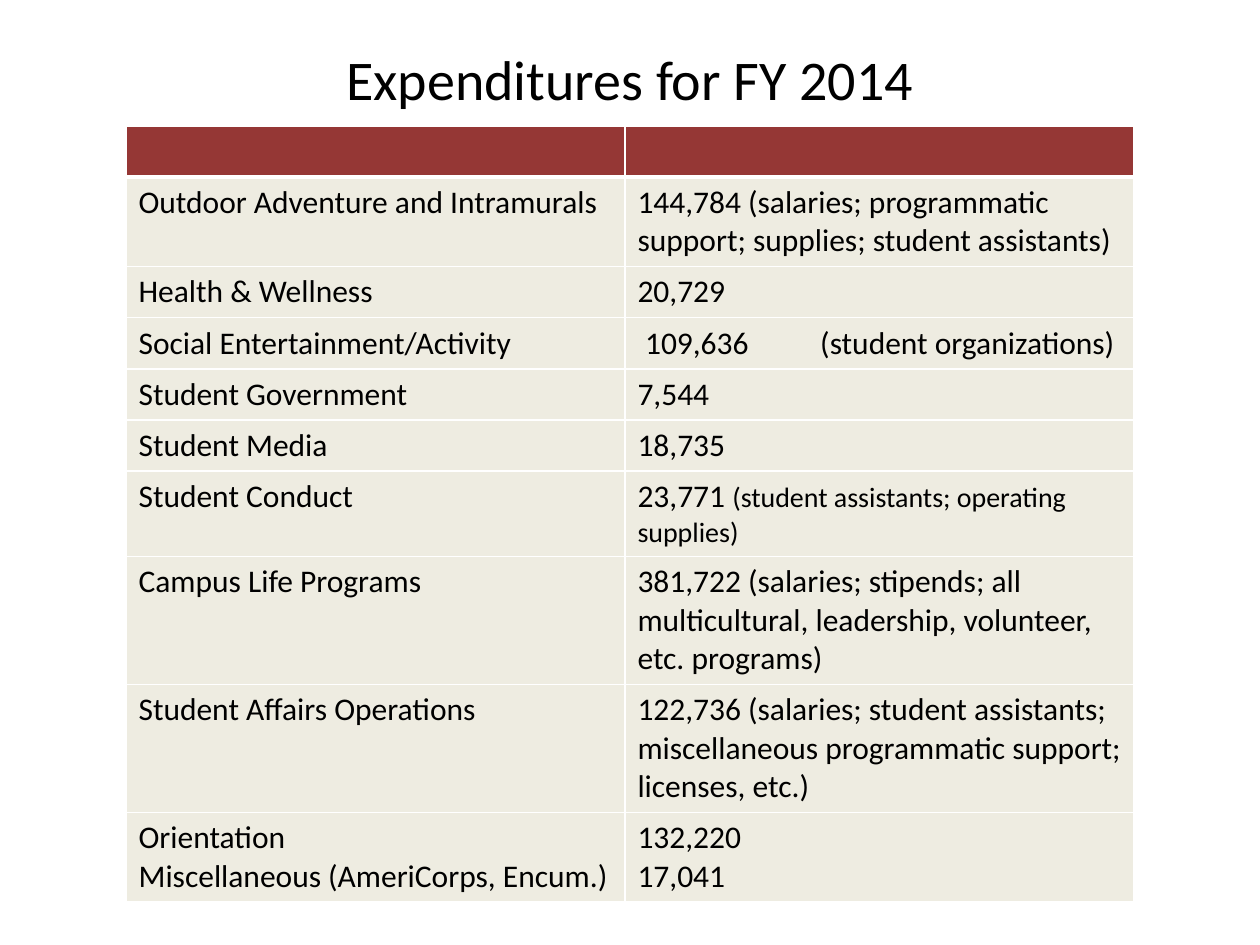
from dataclasses import dataclass

from lxml import etree
from pptx import Presentation, util as u
from pptx.dml.color import RGBColor
from pptx.enum import text
from pptx.oxml.ns import qn


@dataclass(frozen=True)
class Theme:
    font: str = "Calibri"
    ink: str = "000000"
    header: str = "953735"
    body: str = "EEECE1"
    border: str = "FFFFFF"
    title_size: int = 32
    body_size: int = 18
    note_size: int = 16


@dataclass(frozen=True)
class Expenditure:
    """One table row; line breaks in area and amount separate paragraphs."""
    area: str
    amount: str
    height: float = 0.38
    note: str = ""
    tab: float = 0
    margin: float = 0.1


THEME = Theme()
HEADER_HEIGHT = 0.38
COLUMN_WIDTHS = (3.96, 4.04)
EXPENDITURES = (
    Expenditure("Outdoor Adventure and Intramurals",
                "144,784 (salaries; programmatic support; supplies; student assistants)", 0.66),
    Expenditure("Health & Wellness", "20,729"),
    Expenditure("Social Entertainment/Activity", "109,636\t(student organizations)",
                tab=1.39, margin=0.16),
    Expenditure("Student Government", "7,544"),
    Expenditure("Student Media", "18,735"),
    Expenditure("Student Conduct", "23,771 ", 0.63,
                note="(student assistants; operating supplies)"),
    Expenditure("Campus Life Programs",
                "381,722 (salaries; stipends; all multicultural, leadership, volunteer, "
                "etc. programs)", 0.94),
    Expenditure("Student Affairs Operations",
                "122,736 (salaries; student assistants; miscellaneous programmatic support; "
                "licenses, etc.)", 0.94),
    Expenditure("Orientation\nMiscellaneous (AmeriCorps, Encum.)", "132,220\n17,041", 0.7),
)


def add_text(p, content: str, *, size: int = THEME.body_size) -> None:
    r = p.add_run()
    r.text = content
    r.font.name = THEME.font
    r.font.size = u.Pt(size)
    r.font.color.rgb = RGBColor.from_string(THEME.ink)


def add_tab_stop(p, position: float) -> None:
    tabs = etree.SubElement(p._p.get_or_add_pPr(), qn("a:tabLst"))
    etree.SubElement(tabs, qn("a:tab"), pos=str(u.Inches(position)), algn="l")


def style_cell(cell, fill: str, bottom: float = 1) -> None:
    """Set the fill and the four borders; bottom is a line width in points."""
    tc_pr = cell._tc.get_or_add_tcPr()
    for side, width in (("L", 1), ("R", 1), ("T", 1), ("B", bottom)):
        ln = etree.SubElement(tc_pr, qn(f"a:ln{side}"), w=str(u.Pt(width)))
        solid = etree.SubElement(ln, qn("a:solidFill"))
        etree.SubElement(solid, qn("a:srgbClr"), val=THEME.border)
    cell.fill.solid()
    cell.fill.fore_color.rgb = RGBColor.from_string(fill)


def write_cell(cell, content: str, *, note: str = "", tab: float = 0,
               margin: float = 0.1) -> None:
    cell.margin_left = u.Inches(margin)
    tf = cell.text_frame
    for i, line in enumerate(content.split("\n")):
        p = tf.add_paragraph() if i else tf.paragraphs[0]
        if tab:
            add_tab_stop(p, tab)
        add_text(p, line)
    if note:
        add_text(p, note, size=THEME.note_size)


def add_title(s, content: str) -> None:
    sp = s.shapes.title
    sp.left, sp.top, sp.width, sp.height = map(u.Inches, (0.5, 0.3, 9, 1.25))
    tf = sp.text_frame
    tf.vertical_anchor = text.MSO_ANCHOR.TOP
    p = tf.paragraphs[0]
    p.alignment = text.PP_ALIGN.CENTER
    add_text(p, content, size=THEME.title_size)


def add_expenditure_table(s) -> None:
    heights = [HEADER_HEIGHT] + [e.height for e in EXPENDITURES]
    table = s.shapes.add_table(
        len(heights), len(COLUMN_WIDTHS), u.Inches(1), u.Inches(1),
        u.Inches(sum(COLUMN_WIDTHS)), u.Inches(sum(heights))).table
    table.horz_banding = False
    for column, width in zip(table.columns, COLUMN_WIDTHS):
        column.width = u.Inches(width)
    for row, height in zip(table.rows, heights):
        row.height = u.Inches(height)
    for cell in table.rows[0].cells:
        style_cell(cell, THEME.header, bottom=3)
    for i, e in enumerate(EXPENDITURES, 1):
        area, amount = table.cell(i, 0), table.cell(i, 1)
        for cell in (area, amount):
            style_cell(cell, THEME.body)
        write_cell(area, e.area)
        write_cell(amount, e.amount, note=e.note, tab=e.tab, margin=e.margin)


def main() -> None:
    prs = Presentation()
    prs.slide_width, prs.slide_height = u.Inches(10), u.Inches(7.5)
    s = prs.slides.add_slide(prs.slide_layouts[5])
    add_title(s, "Expenditures for FY 2014")
    add_expenditure_table(s)
    prs.save("out.pptx")


if __name__ == "__main__":
    main()
